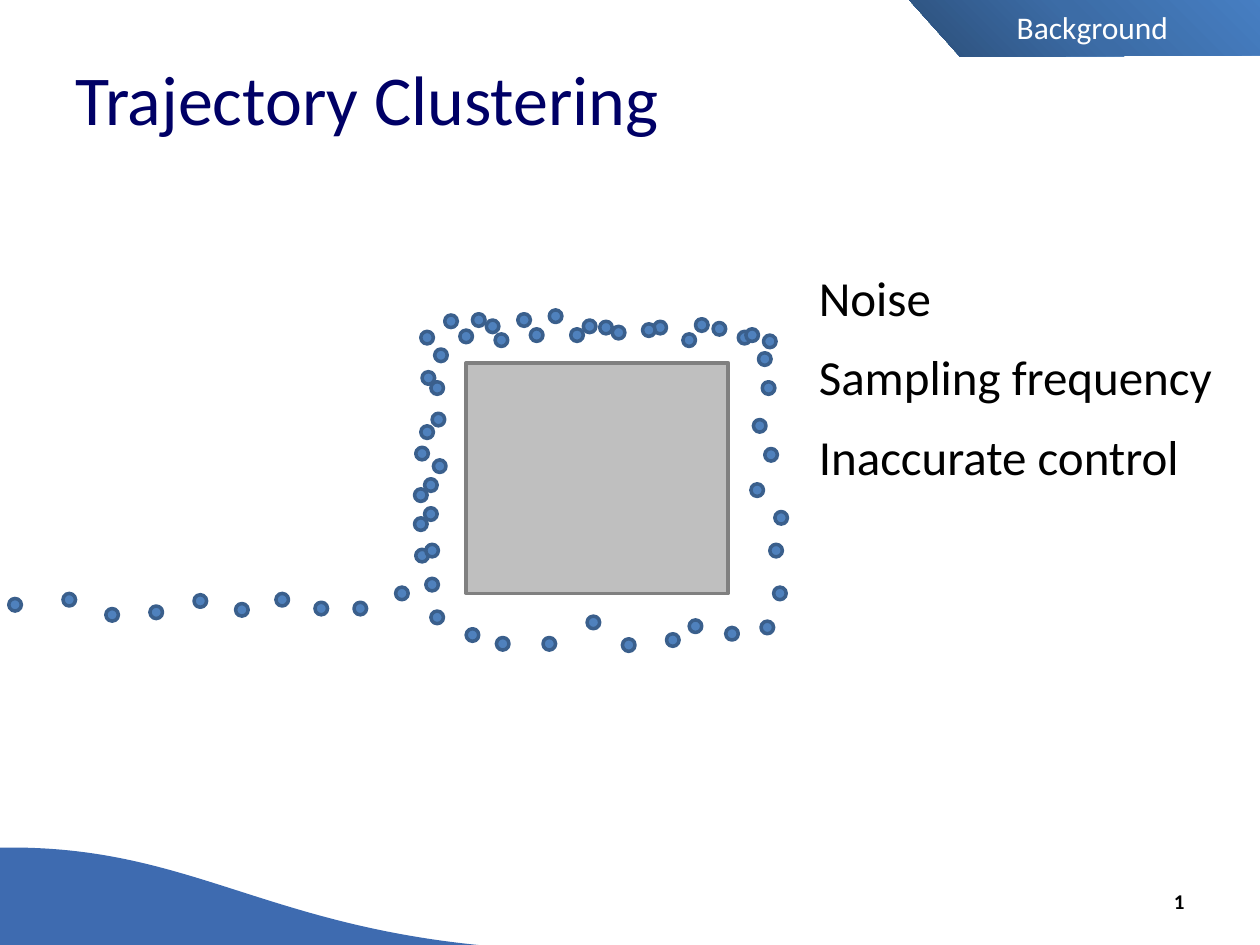
from dataclasses import dataclass
from typing import NamedTuple

from pptx import Presentation
from pptx.dml.color import RGBColor
from pptx.enum.shapes import MSO_SHAPE
from pptx.enum.text import MSO_ANCHOR, PP_ALIGN
from pptx.oxml import parse_xml
from pptx.oxml.ns import nsdecls
from pptx.util import Inches, Pt

OVAL, RECTANGLE = MSO_SHAPE.OVAL, MSO_SHAPE.RECTANGLE
DOCUMENT = MSO_SHAPE.FLOWCHART_DOCUMENT
TOP, MIDDLE = MSO_ANCHOR.TOP, MSO_ANCHOR.MIDDLE
LEFT, CENTER, RIGHT = PP_ALIGN.LEFT, PP_ALIGN.CENTER, PP_ALIGN.RIGHT


@dataclass(frozen=True)
class Theme:
    font: str = "Calibri"
    title: str = "000066"
    text: str = "000000"
    light_text: str = "FFFFFF"
    wave: str = "3E6BB0"
    tab_stops: tuple = ((0, "2A4C75"), (50, "3C6CA6"), (100, "4780C5"))
    obstacle: str = "BFBFBF"
    obstacle_line: str = "808080"
    dot: str = "4F81BD"
    dot_line: str = "3A5F8C"
    title_size: int = 40
    list_size: int = 28
    tab_size: int = 18
    number_size: int = 12
    line_width: int = 2


class Box(NamedTuple):
    left: float
    top: float
    width: float
    height: float

    def lengths(self) -> list:
        return [Inches(value) for value in self]


@dataclass(frozen=True)
class Label:
    lines: tuple
    box: Box
    size: int
    color: str
    align: PP_ALIGN = LEFT
    anchor: MSO_ANCHOR = MIDDLE
    bold: bool = False
    wrap: bool = True
    space_after: int = 0


THEME = Theme()
DOT_SIZE = 0.1

# Top-left corners of the sampled positions, in inches
APPROACH = (
    (0.07, 4.75), (0.5, 4.71), (0.84, 4.83), (1.19, 4.81), (1.54, 4.72),
    (1.87, 4.79), (2.19, 4.71), (2.5, 4.78), (2.81, 4.78), (3.14, 4.66),
)
FIRST_LAP = (
    (3.3, 4.36), (3.37, 4.03), (3.37, 3.8), (3.3, 3.55), (3.43, 3.28),
    (3.35, 2.95), (3.34, 2.63), (3.65, 2.62), (3.86, 2.54), (4.11, 2.49),
    (4.36, 2.46), (4.63, 2.54), (4.86, 2.59), (5.19, 2.55), (5.52, 2.53),
    (5.86, 2.63), (6.02, 2.8), (6.05, 3.03), (5.98, 3.33), (6.07, 3.56),
    (5.96, 3.84), (6.15, 4.06), (6.11, 4.32), (6.14, 4.66), (6.04, 4.93),
    (5.76, 4.98), (5.47, 4.92), (5.29, 5.03), (4.94, 5.07), (4.66, 4.89),
    (4.31, 5.06), (3.94, 5.06), (3.7, 4.99), (3.42, 4.85),
)
SECOND_LAP = (
    (3.38, 4.59), (3.38, 4.32), (3.29, 4.11), (3.29, 3.88), (3.44, 3.65),
    (3.34, 3.38), (3.42, 3.03), (3.45, 2.77), (3.53, 2.5), (3.75, 2.49),
    (3.93, 2.65), (4.21, 2.61), (4.53, 2.61), (4.76, 2.55), (5.1, 2.57),
    (5.42, 2.65), (5.66, 2.56), (5.92, 2.61), (6.06, 2.66),
)

TITLE = Label(("Trajectory Clustering",), Box(0.5, 0.3, 9, 0.95),
              THEME.title_size, THEME.title)
OTHER_LABELS = (
    Label(("1",), Box(7.17, 6.95, 2.33, 0.4), THEME.number_size, THEME.text,
          align=RIGHT, bold=True),
    Label(("Background",), Box(7.42, 0, 2.5, 0.42), THEME.tab_size,
          THEME.light_text, align=CENTER),
    Label(("Noise", "Sampling frequency", "Inaccurate control"),
          Box(6.4, 2.07, 3.49, 1.85), THEME.list_size, THEME.text,
          anchor=TOP, wrap=False, space_after=12),
)


def add_filled_shape(slide, kind: MSO_SHAPE, box: Box, fill: str, line: str = ""):
    shape = slide.shapes.add_shape(kind, *box.lengths())
    shape.shadow.inherit = False
    shape.fill.solid()
    shape.fill.fore_color.rgb = RGBColor.from_string(fill)
    if line:
        shape.line.color.rgb = RGBColor.from_string(line)
        shape.line.width = Pt(THEME.line_width)
    else:
        shape.line.fill.background()
    return shape


def add_corner_tab(slide) -> None:
    builder = slide.shapes.build_freeform(Inches(7.1), Inches(-0.13), scale=1.0)
    corners = ((10.02, -0.13), (10.02, 0.44), (7.62, 0.45))
    builder.add_line_segments([(Inches(x), Inches(y)) for x, y in corners], close=True)
    tab = builder.convert_to_shape()
    tab.shadow.inherit = False
    tab.line.fill.background()
    # Radial gradient spreading from the bottom-left corner
    stops = "".join(
        f'<a:gs pos="{position * 1000}"><a:srgbClr val="{color}"/></a:gs>'
        for position, color in THEME.tab_stops
    )
    gradient = parse_xml(
        f'<a:gradFill {nsdecls("a")} rotWithShape="1"><a:gsLst>{stops}</a:gsLst>'
        '<a:path path="circle"><a:fillToRect t="100000" r="100000"/></a:path>'
        '</a:gradFill>'
    )
    tab.element.spPr.insert(2, gradient)


def add_label(slide, label: Label):
    text_box = slide.shapes.add_textbox(*label.box.lengths())
    text_frame = text_box.text_frame
    text_frame.word_wrap = label.wrap
    text_frame.vertical_anchor = label.anchor
    text_frame.text = "\n".join(label.lines)
    for paragraph in text_frame.paragraphs:
        paragraph.alignment = label.align
        paragraph.space_after = Pt(label.space_after)
        for run in paragraph.runs:
            run.font.name = THEME.font
            run.font.size = Pt(label.size)
            run.font.bold = label.bold
            run.font.color.rgb = RGBColor.from_string(label.color)
    return text_box


def add_text_shadow(text_box) -> None:
    run = text_box.text_frame.paragraphs[0].runs[0]
    shadow = parse_xml(
        f'<a:effectLst {nsdecls("a")}><a:outerShdw blurRad="38100" dist="38100" '
        'dir="2700000" algn="tl"><a:srgbClr val="C0C0C0"/></a:outerShdw></a:effectLst>'
    )
    run.font.fill.solid()
    run.font.color.rgb = RGBColor.from_string(THEME.title)
    run.font._element.insert(1, shadow)


def main() -> None:
    presentation = Presentation()
    presentation.slide_width = Inches(10)
    presentation.slide_height = Inches(7.5)
    slide = presentation.slides.add_slide(presentation.slide_layouts[6])

    # Background decoration
    wave = add_filled_shape(slide, DOCUMENT, Box(-1.63, 6.67, 6.38, 4.42), THEME.wave)
    wave.element.spPr.xfrm.set("flipV", "1")
    add_corner_tab(slide)

    # Text
    add_text_shadow(add_label(slide, TITLE))
    for label in OTHER_LABELS:
        add_label(slide, label)

    # Obstacle and the trajectory around it
    add_filled_shape(slide, RECTANGLE, Box(3.7, 2.88, 2.08, 1.83),
                     THEME.obstacle, THEME.obstacle_line)
    for left, top in APPROACH + FIRST_LAP + SECOND_LAP:
        add_filled_shape(slide, OVAL, Box(left, top, DOT_SIZE, DOT_SIZE),
                         THEME.dot, THEME.dot_line)

    presentation.save("out.pptx")


if __name__ == "__main__":
    main()
